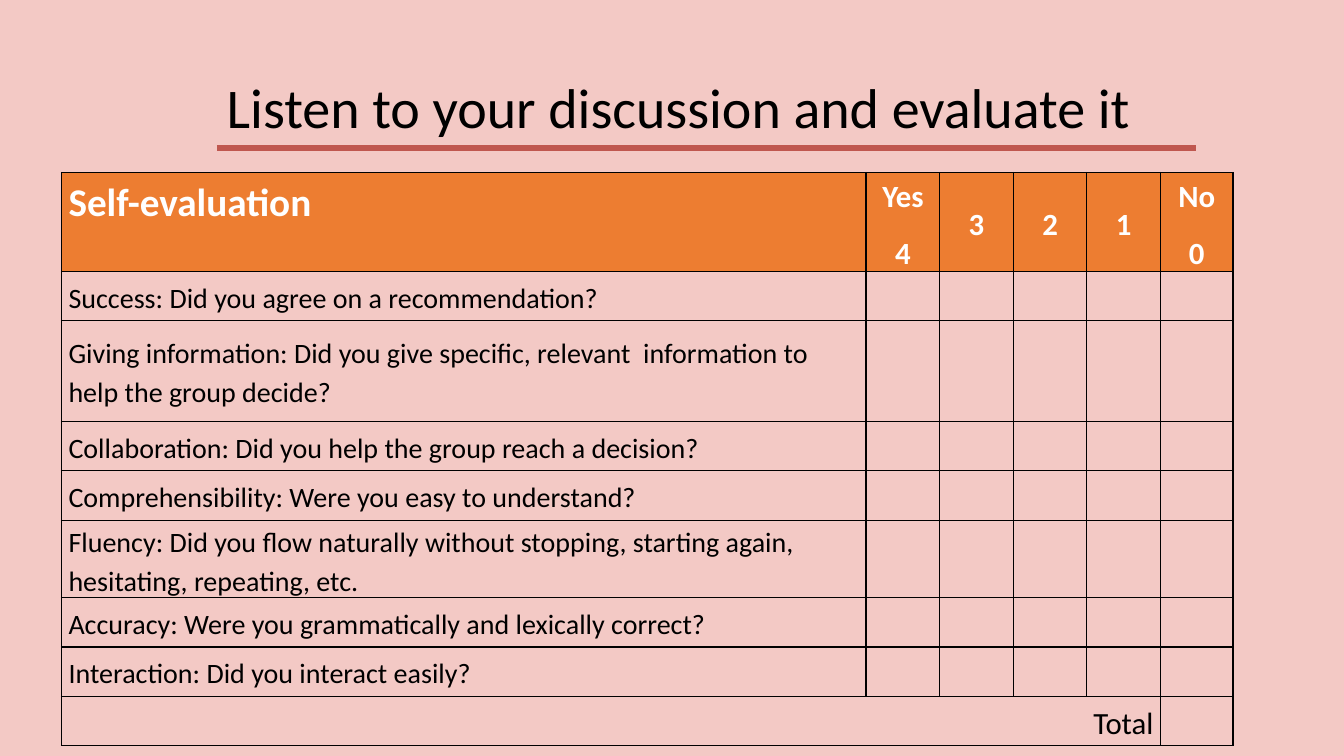
from pptx import Presentation
from pptx import util as u
from pptx.dml.color import RGBColor
from pptx.enum import shapes, text
from pptx.oxml import parse_xml
from pptx.oxml.ns import nsdecls, qn

TITLE = "Listen to your discussion and evaluate it"
HEAD = ["Self-evaluation", "Yes\n4", "3", "2", "1", "No\n0"]
ITEMS = [
    ("Success: Did you agree on a recommendation?", 0.49),
    ("Giving information: Did you give specific, relevant  information to help the group decide?", 1),
    ("Collaboration: Did you help the group reach a decision?", 0.49),
    ("Comprehensibility: Were you easy to understand?", 0.49),
    ("Fluency: Did you flow naturally without stopping, starting again, hesitating, repeating, etc.", 0.73),
    ("Accuracy: Were you grammatically and lexically correct?", 0.49),
    ("Interaction: Did you interact easily?", 0.49),
]
TOTAL = "Total"
COLS = [7.98] + [0.73] * 4 + [0.72]
ROWS = [0.94] + [high for _, high in ITEMS] + [0.49]
COLOR = {"back": "F3C9C5", "rule": "BF574F", "head": "ED7D31",
         "grid": "000000", "ink": "000000", "white": "FFFFFF"}
ALIGN = {"l": text.PP_ALIGN.LEFT, "c": text.PP_ALIGN.CENTER, "r": text.PP_ALIGN.RIGHT}


def rgb(name):
    return RGBColor.from_string(COLOR[name])


def write(words, frame, size=20, color="ink", bold=False, align="l", line=1.15, after=10):
    for i, part in enumerate(words.split("\n")):
        para = frame.paragraphs[0] if i == 0 else frame.add_paragraph()
        para.alignment = ALIGN[align]
        para.line_spacing = line
        para.space_after = u.Pt(after)
        run = para.add_run()
        run.text = part
        run.font.name = "Calibri"
        run.font.size = u.Pt(size)
        run.font.bold = bold
        run.font.color.rgb = rgb(color)


def border(cell):
    props = cell._tc.get_or_add_tcPr()
    for i, side in enumerate(("lnL", "lnR", "lnT", "lnB")):
        props.insert(i, parse_xml(
            f'<a:{side} {nsdecls("a")} w="{u.Pt(1)}"><a:solidFill>'
            f'<a:srgbClr val="{COLOR["grid"]}"/></a:solidFill></a:{side}>'))


def main():
    deck = Presentation()
    deck.slide_width, deck.slide_height = u.Inches(13.33), u.Inches(7.5)
    slide = deck.slides.add_slide(deck.slide_layouts[6])
    slide.background.fill.solid()
    slide.background.fill.fore_color.rgb = rgb("back")

    rule = slide.shapes.add_connector(
        shapes.MSO_CONNECTOR.STRAIGHT, *map(u.Inches, (2.15, 1.47, 11.86, 1.47)))
    rule.line.color.rgb = rgb("rule")
    rule.line.width = u.Pt(4.5)
    rule._element.spPr.append(parse_xml(f'<a:effectLst {nsdecls("a")}/>'))

    title = slide.shapes.add_textbox(*map(u.Inches, (2.15, 0.37, 10.65, 1.45))).text_frame
    title.word_wrap = True
    title.vertical_anchor = text.MSO_ANCHOR.MIDDLE
    write(TITLE, title, size=40, line=0.9, after=0)

    box = map(u.Inches, (0.61, 1.71, sum(COLS), sum(ROWS)))
    table = slide.shapes.add_table(len(ROWS), len(COLS), *box).table
    table.first_row = table.horz_banding = False
    table._tbl.tblPr.find(qn("a:tableStyleId")).text = "{2D5ABB26-0587-4C30-8999-92F81FD0307C}"
    for col, wide in zip(table.columns, COLS):
        col.width = u.Inches(wide)
    for r, (row, high) in enumerate(zip(table.rows, ROWS)):
        row.height = u.Inches(high)
        for c, cell in enumerate(row.cells):
            cell.margin_left = cell.margin_right = u.Inches(0.07)
            cell.margin_top = cell.margin_bottom = 0
            if r or c:
                cell.vertical_anchor = text.MSO_ANCHOR.MIDDLE
            if r:
                cell.fill.background()
            else:
                cell.fill.solid()
                cell.fill.fore_color.rgb = rgb("head")
            border(cell)

    for c, label in enumerate(HEAD):
        write(label, table.cell(0, c).text_frame, size=22 if c else 28,
              color="white", bold=True, align="c" if c else "l")
    for r, (item, _) in enumerate(ITEMS, 1):
        write(item, table.cell(r, 0).text_frame)
    last = len(ROWS) - 1
    total = table.cell(last, 0)
    total.merge(table.cell(last, len(COLS) - 2))
    write(TOTAL, total.text_frame, size=22, align="r")
    deck.save("out.pptx")


if __name__ == "__main__":
    main()
